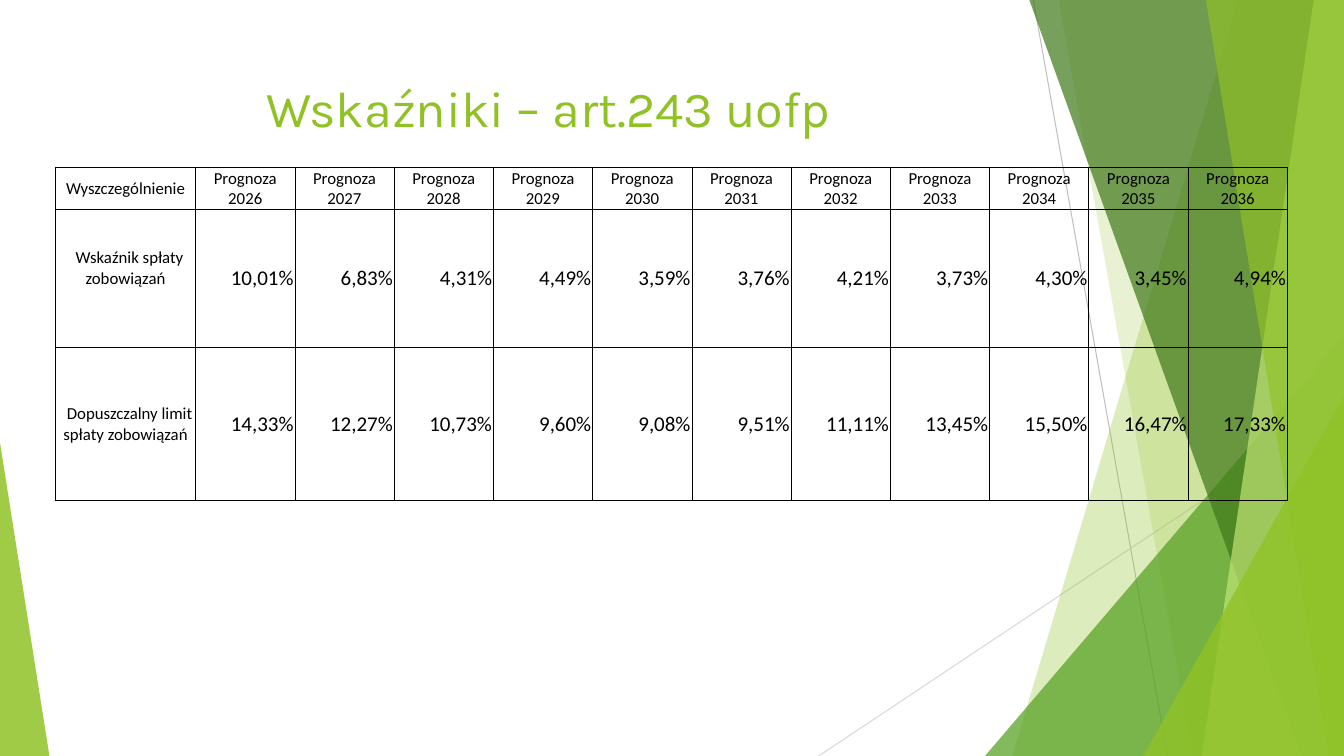
from dataclasses import dataclass

from lxml.etree import SubElement as Sub
from pptx import Presentation
from pptx.dml.color import RGBColor as Rgb
from pptx.enum.shapes import MSO_CONNECTOR as Link, MSO_SHAPE as Form
from pptx.enum.text import MSO_ANCHOR as Anchor, PP_ALIGN as Align
from pptx.oxml import parse_xml
from pptx.oxml.ns import qn
from pptx.util import Inches, Pt

WIDE, HIGH = Inches(13.33), Inches(7.5)


@dataclass(frozen=True)
class Theme:
    lime: str = "90C226"
    leaf: str = "54A021"
    moss: str = "3F7819"
    pale: str = "C0E474"
    ink: str = "000000"
    gray: str = "BFBFBF"
    mist: str = "D9D9D9"
    head: str = "Karla"
    body: str = "Calibri"
    title: float = 36
    label: float = 12
    value: float = 15
    rule: float = 0.75
    edge: float = 0.5


@dataclass(frozen=True)
class Ray:
    x1: float
    y1: float
    x2: float
    y2: float
    color: str


@dataclass(frozen=True)
class Slab:
    top: float
    foot: float
    color: str
    alpha: int


@dataclass(frozen=True)
class Peak:
    left: float
    top: float
    wide: float
    apex: float
    color: str
    alpha: int


@dataclass(frozen=True)
class Row:
    label: str
    cells: list[str]
    high: float
    size: float
    align: Align
    indent: float = 0
    lift: float = 0


THEME = Theme()
RAYS = [
    Ray(76.89, 0, 86.87, 100, THEME.gray),
    Ray(100, 53.73, 60.92, 100, THEME.mist),
]
PANES = [
    Slab(92.12, 75.32, THEME.lime, 30),
    Slab(78.77, 88.75, THEME.lime, 20),
    Peak(73.29, 44.4, 26.71, 1, THEME.leaf, 72),
    Slab(76.59, 96.85, THEME.moss, 70),
    Slab(97.75, 89.42, THEME.pale, 70),
    Slab(89.72, 98.87, THEME.lime, 65),
    Peak(85.07, 52.4, 14.93, 1, THEME.lime, 80),
    Peak(0, 58.53, 3.68, 0, THEME.lime, 85),
]
ROWS = [
    Row("Wyszczególnienie", [f"Prognoza {year}" for year in range(2026, 2037)],
        5.5, THEME.label, Align.CENTER),
    Row("Wskaźnik spłaty zobowiązań",
        "10,01% 6,83% 4,31% 4,49% 3,59% 3,76% 4,21% 3,73% 4,30% 3,45% 4,94%".split(),
        18.27, THEME.value, Align.RIGHT, 0.6, 2.8),
    Row("Dopuszczalny limit spłaty zobowiązań",
        "14,33% 12,27% 10,73% 9,60% 9,08% 9,51% 11,11% 13,45% 15,50% 16,47% 17,33%".split(),
        20.27, THEME.value, Align.RIGHT, 0.6),
]


def across(share: float) -> int:
    """Turn a percentage of the slide's width into a length."""
    return round(WIDE * share / 100)


def down(share: float) -> int:
    """Turn a percentage of the slide's height into a length."""
    return round(HIGH * share / 100)


def draw_ray(slide, ray: Ray) -> None:
    line = slide.shapes.add_connector(
        Link.STRAIGHT, across(ray.x1), down(ray.y1), across(ray.x2), down(ray.y2))
    line.line.color.rgb = Rgb.from_string(ray.color)
    line.line.width = Pt(THEME.rule)
    Sub(line.element.spPr, qn("a:effectLst"))


def draw_pane(slide, pane: Slab | Peak) -> None:
    if isinstance(pane, Slab):
        path = slide.shapes.build_freeform(across(pane.top), 0, scale=1.0)
        path.add_line_segments(
            [(WIDE, 0), (WIDE, HIGH), (across(pane.foot), HIGH)], close=True)
        shape = path.convert_to_shape()
    else:
        shape = slide.shapes.add_shape(
            Form.ISOSCELES_TRIANGLE, across(pane.left), down(pane.top),
            across(pane.wide), down(100 - pane.top))
        shape.adjustments[0] = pane.apex
    shape.shadow.inherit = False
    shape.fill.solid()
    shape.fill.fore_color.rgb = Rgb.from_string(pane.color)
    shape.line.fill.background()
    tint = shape.element.spPr.find(".//" + qn("a:srgbClr"))
    Sub(tint, qn("a:alpha"), val=str(pane.alpha * 1000))


def style(para, font: str, size: float, color: str, align: Align) -> None:
    para.alignment = align
    for run in para.runs:
        run.font.name = font
        run.font.size = Pt(size)
        run.font.color.rgb = Rgb.from_string(color)


def draw_title(slide, text: str) -> None:
    title = slide.shapes.title
    title.left, title.top = across(5.55), down(8.93)
    title.width, title.height = across(70.52), down(10.53)
    title.text_frame.text = text
    title.text_frame.vertical_anchor = Anchor.MIDDLE
    style(title.text_frame.paragraphs[0], THEME.head, THEME.title, THEME.lime, Align.CENTER)
    title.element.getparent().append(title.element)


def fill_cell(cell, text: str, size: float, align: Align,
              indent: float = 0, lift: float = 0) -> None:
    cell.text_frame.text = text
    cell.vertical_anchor = Anchor.MIDDLE
    cell.margin_left = cell.margin_right = across(0.1)
    cell.margin_top, cell.margin_bottom = down(0.13), down(lift)
    cell.fill.background()
    para = cell.text_frame.paragraphs[0]
    style(para, THEME.body, size, THEME.ink, align)
    if indent:
        para._p.get_or_add_pPr().set("indent", str(across(indent)))
    props = cell._tc.get_or_add_tcPr()
    for spot, side in enumerate("LRTB"):
        props.insert(spot, parse_xml(
            f'<a:ln{side} xmlns:a="http://schemas.openxmlformats.org/drawingml/2006/main"'
            f' w="{Pt(THEME.edge)}"><a:solidFill><a:srgbClr val="{THEME.ink}"/>'
            f'</a:solidFill></a:ln{side}>'))


def draw_table(slide, rows: list[Row]) -> None:
    count, first, total = len(rows[0].cells), 10.43, 91.67
    table = slide.shapes.add_table(
        len(rows), count + 1, across(4.13), down(22.13), across(total),
        down(sum(row.high for row in rows))).table
    table.first_row = table.horz_banding = False
    for spot, col in enumerate(table.columns):
        col.width = across((total - first) / count if spot else first)
    for spot, row in enumerate(rows):
        table.rows[spot].height = down(row.high)
        fill_cell(table.cell(spot, 0), row.label, THEME.label, Align.CENTER,
                  row.indent, row.lift)
        for col, text in enumerate(row.cells, 1):
            fill_cell(table.cell(spot, col), text, row.size, row.align)


def main() -> None:
    deck = Presentation()
    deck.slide_width, deck.slide_height = WIDE, HIGH
    slide = deck.slides.add_slide(deck.slide_layouts[5])
    for ray in RAYS:
        draw_ray(slide, ray)
    for pane in PANES:
        draw_pane(slide, pane)
    draw_title(slide, "Wskaźniki – art.243 uofp")
    draw_table(slide, ROWS)
    deck.save("out.pptx")


if __name__ == "__main__":
    main()
